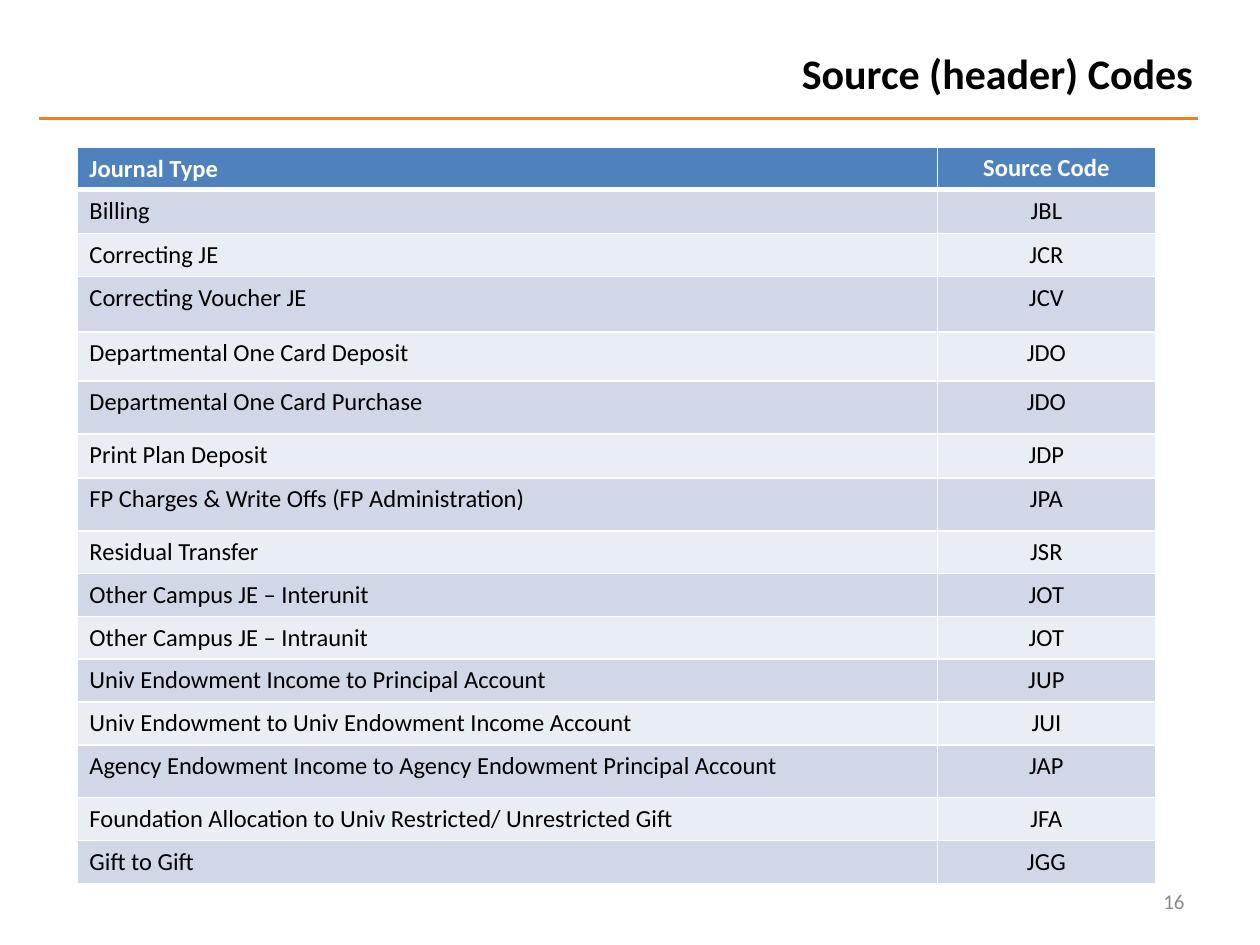
import pptx
import pptx.util
import pptx.dml.color
import pptx.enum.shapes
import pptx.enum.text
from lxml import etree
from pptx.oxml.ns import qn

Inches, Pt = pptx.util.Inches, pptx.util.Pt
ALIGN, ANCHOR = pptx.enum.text.PP_ALIGN, pptx.enum.text.MSO_ANCHOR

# Content
TITLE = "Source (header) Codes"
PAGE_NUMBER = "16"
HEADER = ("Journal Type", "Source Code")
# journal type, source code, row height in inches
JOURNALS = [
    ("Billing", "JBL", 0.35),
    ("Correcting JE", "JCR", 0.34),
    ("Correcting Voucher JE", "JCV", 0.44),
    ("Departmental One Card Deposit", "JDO", 0.39),
    ("Departmental One Card Purchase", "JDO", 0.42),
    ("Print Plan Deposit", "JDP", 0.35),
    ("FP Charges & Write Offs (FP Administration)", "JPA", 0.42),
    ("Residual Transfer", "JSR", 0.34),
    ("Other Campus JE – Interunit", "JOT", 0.34),
    ("Other Campus JE – Intraunit", "JOT", 0.34),
    ("Univ Endowment Income to Principal Account", "JUP", 0.34),
    ("Univ Endowment to Univ Endowment Income Account", "JUI", 0.34),
    ("Agency Endowment Income to Agency Endowment Principal Account", "JAP", 0.42),
    ("Foundation Allocation to Univ Restricted/ Unrestricted Gift", "JFA", 0.34),
    ("Gift to Gift", "JGG", 0.34),
]
HEADER_HEIGHT = 0.33
COLUMN_WIDTHS = (6.83, 1.73)
COLUMN_ALIGNS = (ALIGN.LEFT, ALIGN.CENTER)
HEADER_FILL, BANDS = "4F81BD", ("D0D8E8", "E9EDF4")


def rgb(color):
    return pptx.dml.color.RGBColor.from_string(color)


def write(frame, text, size=14, color="000000", bold=False, align=ALIGN.LEFT):
    paragraph = frame.paragraphs[0]
    paragraph.alignment = align
    paragraph.space_before = Pt(0)
    run = paragraph.add_run()
    run.text = text
    run.font.name = "Calibri"
    run.font.size = Pt(size)
    run.font.bold = bold
    run.font.color.rgb = rgb(color)


def paint_cell(cell, fill, borders):
    cell.fill.solid()
    cell.fill.fore_color.rgb = rgb(fill)
    properties = cell._tc.get_or_add_tcPr()
    # Borders come before the fill, in the order left, right, top, bottom
    for position, (side, width) in enumerate(borders.items()):
        border = etree.Element(qn(f"a:ln{side}"), w=str(Pt(width)))
        solid = etree.SubElement(border, qn("a:solidFill"))
        etree.SubElement(solid, qn("a:srgbClr"), val="FFFFFF")
        properties.insert(position, border)


deck = pptx.Presentation()
deck.slide_width, deck.slide_height = Inches(10), Inches(7.5)
slide = deck.slides.add_slide(deck.slide_layouts[5])

# Rule under the title
rule = slide.shapes.add_connector(
    pptx.enum.shapes.MSO_CONNECTOR.STRAIGHT,
    Inches(0.31), Inches(0.94), Inches(9.51), Inches(0.94))
rule.line.color.rgb = rgb("F17E1F")
rule.line.width = Pt(2)
etree.SubElement(rule._element.spPr, qn("a:effectLst"))

# Title
title = slide.shapes.title
title.left, title.top = Inches(2.08), Inches(0.33)
title.width, title.height = Inches(7.49), Inches(0.58)
title.text_frame.vertical_anchor = ANCHOR.TOP
write(title.text_frame, TITLE, size=24, bold=True, align=ALIGN.RIGHT)

# Page number
page = slide.shapes.add_textbox(Inches(7.17), Inches(6.95), Inches(2.33), Inches(0.4))
page.text_frame.word_wrap = True
page.text_frame.vertical_anchor = ANCHOR.MIDDLE
write(page.text_frame, PAGE_NUMBER, size=12, color="8C8C8C", align=ALIGN.RIGHT)

# Table of journal types
rows = [(*HEADER, HEADER_HEIGHT)] + JOURNALS
codes = slide.shapes.add_table(
    len(rows), len(COLUMN_WIDTHS), Inches(0.61), Inches(1.17),
    Inches(sum(COLUMN_WIDTHS)), Inches(sum(row[-1] for row in rows))).table
for column, width in zip(codes.columns, COLUMN_WIDTHS):
    column.width = Inches(width)

for r, (*texts, height) in enumerate(rows):
    codes.rows[r].height = Inches(height)
    is_header = r == 0
    fill = HEADER_FILL if is_header else BANDS[(r - 1) % 2]
    borders = {"L": 1, "R": 1, "T": 3 if r == 1 else 1, "B": 3 if is_header else 1}
    for c, text in enumerate(texts):
        cell = codes.cell(r, c)
        paint_cell(cell, fill, borders)
        cell.vertical_anchor = ANCHOR.BOTTOM if is_header and c == 1 else ANCHOR.TOP
        write(cell.text_frame, text, color="FFFFFF" if is_header else "000000",
              bold=is_header, align=COLUMN_ALIGNS[c])

deck.save("out.pptx")
